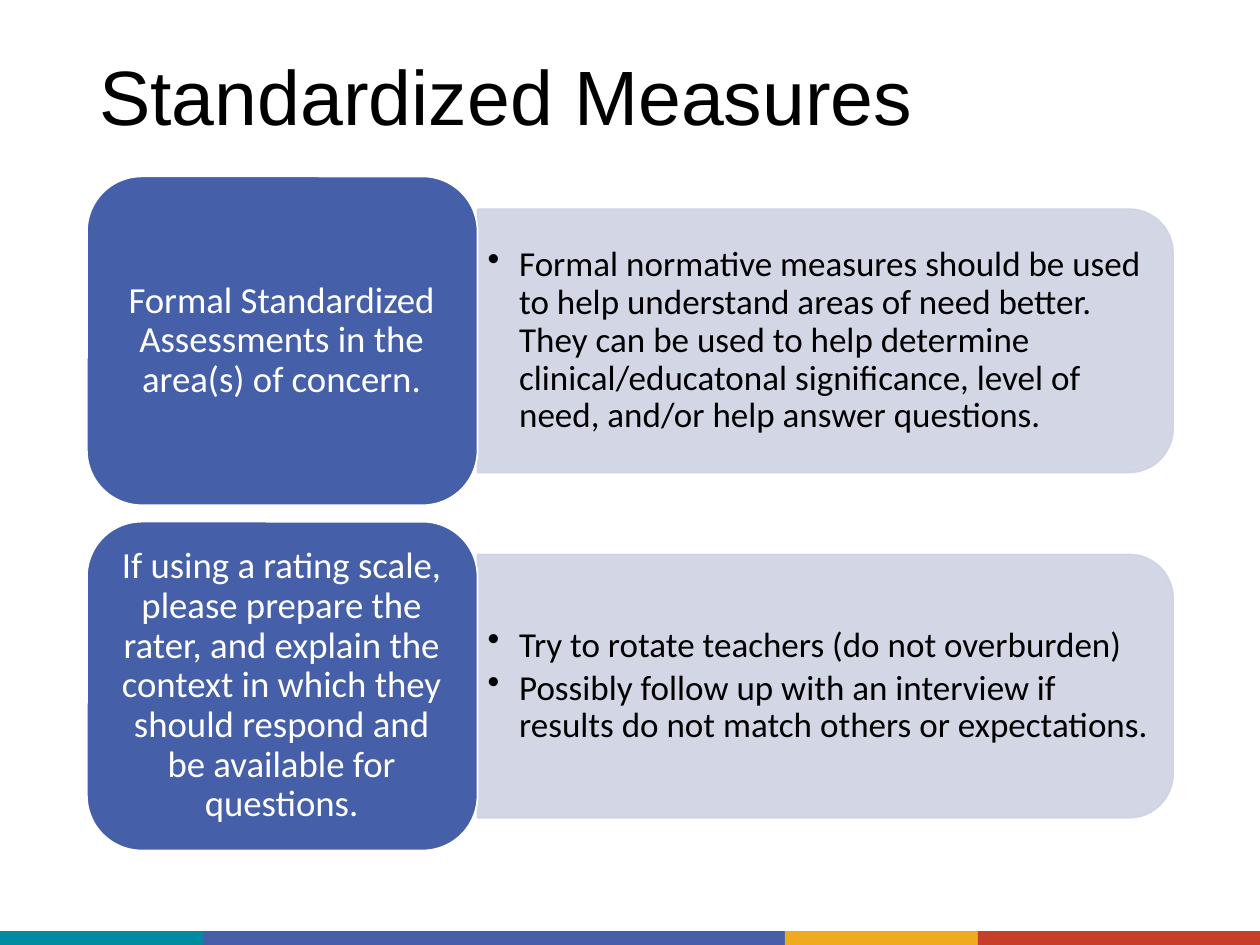
"""Build the Standardized Measures slide."""
import pptx
import pptx.dml.color
import pptx.enum.shapes
import pptx.enum.text
import pptx.oxml
import pptx.oxml.ns
import pptx.util

Inches = pptx.util.Inches
Pt = pptx.util.Pt
Shape = pptx.enum.shapes.MSO_SHAPE
Align = pptx.enum.text.PP_ALIGN

TITLE = "Standardized Measures"
ROWS = [
    ("Formal Standardized Assessments in the area(s) of concern.",
     ["Formal normative measures should be used to help understand areas of "
      "need better. They can be used to help determine clinical/educatonal "
      "significance, level of need, and/or help answer questions."]),
    ("If using a rating scale, please prepare the rater, and explain the "
     "context in which they should respond and be available for questions.",
     ["Try to rotate teachers (do not overburden)",
      "Possibly follow up with an interview if results do not match others "
      "or expectations."]),
]
BANDS = [("teal", 1.61), ("blue", 4.62), ("gold", 1.53), ("red", 2.24)]
COLORS = {"teal": "008CA0", "blue": "455FA9", "gold": "EFAA1F",
          "red": "C63F28", "pale": "CFD2E2", "white": "FFFFFF",
          "black": "000000"}
WIDE, HIGH = 10, 7.5
LEFT, TOP, STEP = 0.69, 1.4, 2.74
CARD_W, CARD_H = 3.1, 2.61
PANEL_W, PANEL_H = 5.52, 2.09
BAND_H = 0.11


def color(name):
    return pptx.dml.color.RGBColor.from_string(COLORS[name])


def add_box(slide, kind, area, fill, line=None):
    box = slide.shapes.add_shape(kind, *map(Inches, area))
    box.shadow.inherit = False
    box.fill.solid()
    box.fill.fore_color.rgb = color(fill)
    if line:
        box.line.color.rgb = color(line)
        box.line.width = Pt(1)
    else:
        box.line.fill.background()
    return box


def fade(box, share):
    for tint in box.element.spPr.iter(pptx.oxml.ns.qn("a:srgbClr")):
        alpha = pptx.oxml.parse_xml(
            f'<a:alpha {pptx.oxml.ns.nsdecls("a")} val="{share * 1000}"/>')
        tint.append(alpha)


def add_bullet(para):
    props = para._p.get_or_add_pPr()
    props.set("marL", str(Inches(0.25)))
    props.set("indent", str(-Inches(0.25)))
    props.append(pptx.oxml.parse_xml(
        f'<a:buChar {pptx.oxml.ns.nsdecls("a")} char="•"/>'))


def add_text(slide, area, lines, size, tint, face="Calibri", pad=(0.1, 0.05),
             align=Align.LEFT, after=0, bullet=False):
    frame = slide.shapes.add_textbox(*map(Inches, area)).text_frame
    frame.word_wrap = True
    frame.vertical_anchor = pptx.enum.text.MSO_ANCHOR.MIDDLE
    frame.margin_left = frame.margin_right = Inches(pad[0])
    frame.margin_top = frame.margin_bottom = Inches(pad[1])
    frame.text = "\n".join(lines)
    for para in frame.paragraphs:
        para.alignment = align
        para.line_spacing = 0.9
        para.space_after = Pt(after)
        if bullet:
            add_bullet(para)
        para.font.name = face
        para.font.size = Pt(size)
        para.font.color.rgb = color(tint)


def add_row(slide, top, label, points):
    split = LEFT + CARD_W
    mid = top + CARD_H / 2
    panel = add_box(slide, Shape.ROUND_2_SAME_RECTANGLE,
                    (split + (PANEL_W - PANEL_H) / 2, mid - PANEL_W / 2,
                     PANEL_H, PANEL_W), "pale", "pale")
    panel.rotation = 90
    fade(panel, 90)
    add_text(slide, (split, mid - 0.94, 5.42, 1.88), points, 20, "black",
             pad=(0.08, 0.04), after=3, bullet=True)
    add_box(slide, Shape.ROUNDED_RECTANGLE, (LEFT, top, CARD_W, CARD_H),
            "blue", "white")
    add_text(slide, (LEFT + 0.12, mid - 1.18, 2.85, 2.36), [label], 21,
             "white", pad=(0.09, 0.04), align=Align.CENTER)


def main():
    deck = pptx.Presentation()
    deck.slide_width, deck.slide_height = Inches(WIDE), Inches(HIGH)
    slide = deck.slides.add_slide(deck.slide_layouts[6])
    left = 0
    for name, width in BANDS:
        add_box(slide, Shape.RECTANGLE,
                (left, HIGH - BAND_H, width, BAND_H), name)
        left += width
    add_text(slide, (LEFT, 0.4, 8.62, 0.8), [TITLE], 44, "black", "Arial")
    for i, (label, points) in enumerate(ROWS):
        add_row(slide, TOP + i * STEP, label, points)
    deck.save("out.pptx")


if __name__ == "__main__":
    main()
